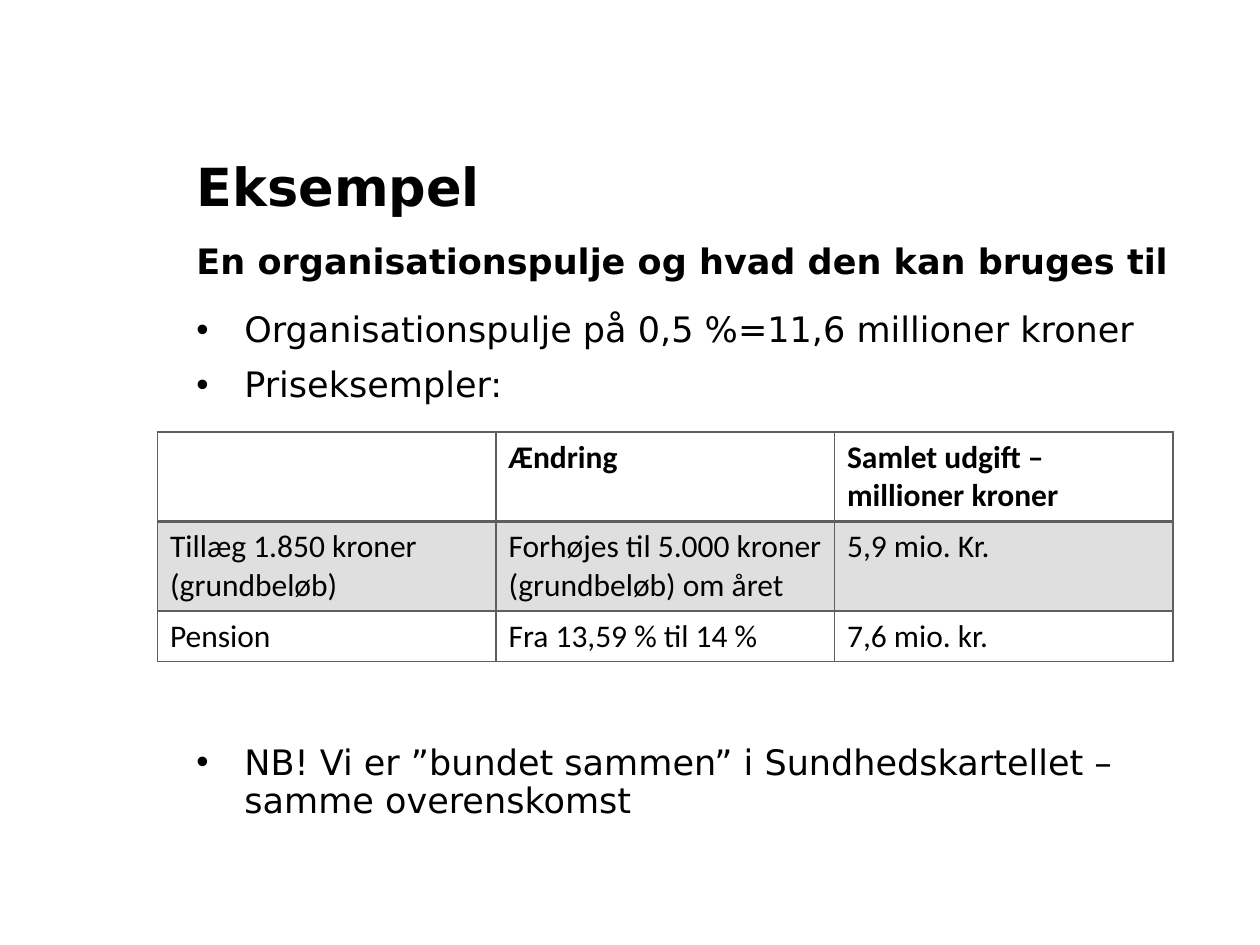
from dataclasses import dataclass

from lxml.etree import SubElement
from pptx import Presentation
from pptx.dml.color import RGBColor
from pptx.oxml.ns import qn
from pptx.util import Inches, Pt


@dataclass(frozen=True)
class Theme:
    text: RGBColor = RGBColor(0x00, 0x00, 0x00)
    band: RGBColor = RGBColor(0xDF, 0xDF, 0xDF)
    border: str = "5F5F5F"
    text_font: str = "DejaVu Sans"
    table_font: str = "Calibri"
    title_size: int = 30
    body_size: int = 20
    table_size: int = 18


THEME = Theme()
LINE_SPACING = 0.9
BULLET_INDENT = Inches(0.38)
TABLE_GAP = 194  # points between the bullets above and below the table

BULLETS = [
    ("Organisationspulje på 0,5 %=11,6 millioner kroner", 0),
    ("Priseksempler:", 10),
    ("NB! Vi er ”bundet sammen” i Sundhedskartellet – samme overenskomst", TABLE_GAP),
]
ROWS = [
    ["", "Ændring", "Samlet udgift – millioner kroner"],
    ["Tillæg 1.850 kroner (grundbeløb)",
     "Forhøjes til 5.000 kroner (grundbeløb) om året", "5,9 mio. Kr."],
    ["Pension", "Fra 13,59 % til 14 %", "7,6 mio. kr."],
]
ROW_HEIGHTS = [0.71, 0.71, 0.4]


def style_font(font, name, size, bold=False):
    font.name = name
    font.size = Pt(size)
    font.bold = bold
    font.color.rgb = THEME.text


def add_text_frame(slide, box):
    """Add a wrapping text box without insets and return its text frame."""
    text_frame = slide.shapes.add_textbox(*map(Inches, box)).text_frame
    text_frame.word_wrap = True
    text_frame.margin_left = text_frame.margin_right = 0
    text_frame.margin_top = text_frame.margin_bottom = 0
    return text_frame


def add_heading(slide, box, text, size):
    paragraph = add_text_frame(slide, box).paragraphs[0]
    paragraph.text = text
    paragraph.line_spacing = LINE_SPACING
    style_font(paragraph.runs[0].font, THEME.text_font, size, bold=True)


def add_bullets(slide, box, bullets):
    text_frame = add_text_frame(slide, box)
    for index, (text, space_before) in enumerate(bullets):
        paragraph = text_frame.add_paragraph() if index else text_frame.paragraphs[0]
        paragraph.text = text
        paragraph.line_spacing = LINE_SPACING
        paragraph.space_before = Pt(space_before)
        properties = paragraph._p.get_or_add_pPr()
        properties.set("marL", str(BULLET_INDENT))
        properties.set("indent", str(-BULLET_INDENT))
        SubElement(properties, qn("a:buFont"), typeface="Arial")
        SubElement(properties, qn("a:buChar"), char="•")
        style_font(paragraph.runs[0].font, THEME.text_font, THEME.body_size)


def add_borders(cell, top, bottom):
    """Outline a cell; top and bottom are line widths in points."""
    properties = cell._tc.get_or_add_tcPr()
    for side, width in (("L", 1), ("R", 1), ("T", top), ("B", bottom)):
        line = SubElement(properties, qn(f"a:ln{side}"), w=str(Pt(width)))
        fill = SubElement(line, qn("a:solidFill"))
        SubElement(fill, qn("a:srgbClr"), val=THEME.border)


def add_price_table(slide, box, rows):
    left, top, width, height = map(Inches, box)
    table = slide.shapes.add_table(
        len(rows), len(rows[0]), left, top, width, height).table
    for column in table.columns:
        column.width = width // len(rows[0])
    for row_index, texts in enumerate(rows):
        table.rows[row_index].height = Inches(ROW_HEIGHTS[row_index])
        header = row_index == 0
        for column_index, text in enumerate(texts):
            cell = table.cell(row_index, column_index)
            cell.text = text
            style_font(cell.text_frame.paragraphs[0].font,
                       THEME.table_font, THEME.table_size, bold=header)
            for run in cell.text_frame.paragraphs[0].runs:
                style_font(run.font, THEME.table_font, THEME.table_size, bold=header)
            add_borders(cell, top=2 if row_index == 1 else 1, bottom=2 if header else 1)
            if row_index == 1:
                cell.fill.solid()
                cell.fill.fore_color.rgb = THEME.band
            else:
                cell.fill.background()


def main():
    presentation = Presentation()
    presentation.slide_width = Inches(10)
    presentation.slide_height = Inches(7.5)
    slide = presentation.slides.add_slide(presentation.slide_layouts[6])

    add_heading(slide, (1.56, 1.94, 7.74, 0.38),
                "En organisationspulje og hvad den kan bruges til", THEME.body_size)
    add_bullets(slide, (1.56, 2.48, 7.74, 4.1), BULLETS)
    add_heading(slide, (1.56, 1.28, 7.75, 0.43), "Eksempel", THEME.title_size)
    add_price_table(slide, (1.25, 3.43, 8.06, sum(ROW_HEIGHTS)), ROWS)

    presentation.save("out.pptx")


if __name__ == "__main__":
    main()
